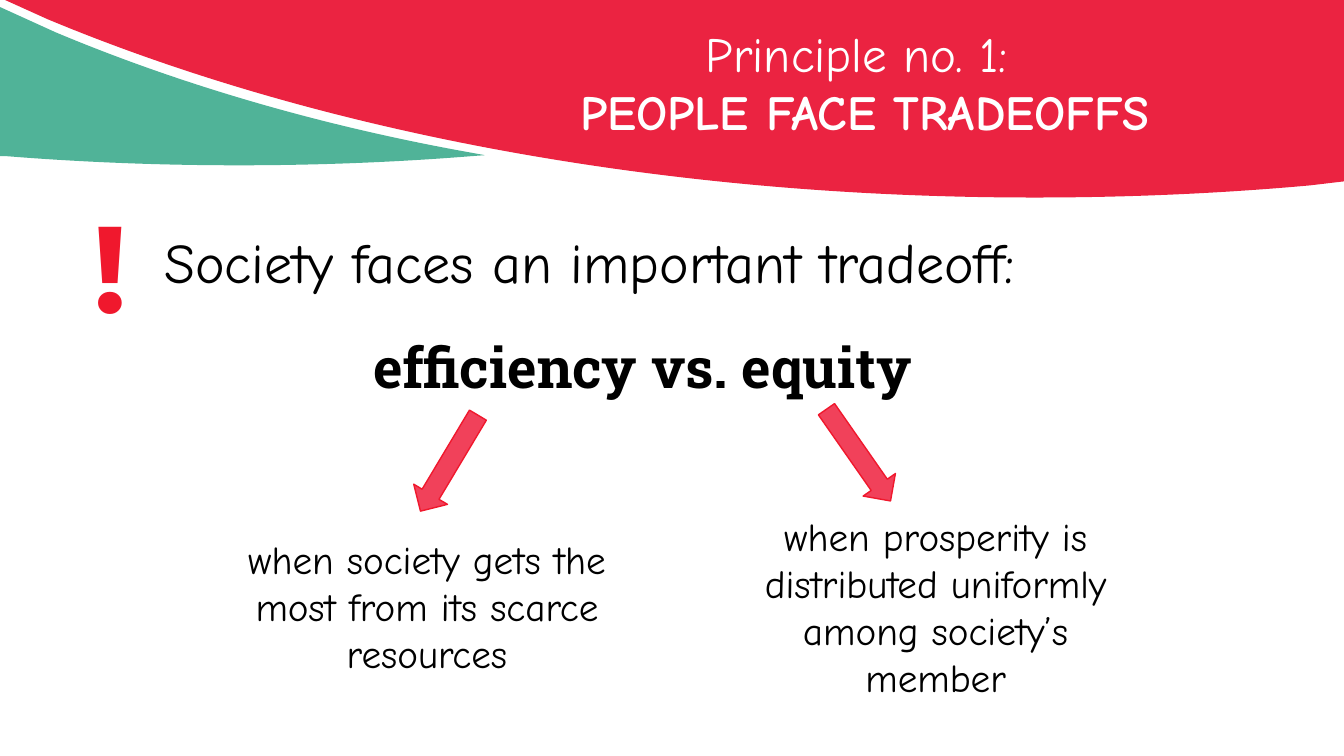
from lxml import etree
from pptx import Presentation
from pptx.dml.color import RGBColor
from pptx.enum.shapes import MSO_SHAPE
from pptx.enum.text import PP_ALIGN
from pptx.oxml.ns import qn
from pptx.util import Inches, Pt

DOWN_ARROW = MSO_SHAPE.DOWN_ARROW
LEFT, CENTER = PP_ALIGN.LEFT, PP_ALIGN.CENTER

WHITE = RGBColor(0xFF, 0xFF, 0xFF)
BLACK = RGBColor(0x00, 0x00, 0x00)
CRIMSON = RGBColor(0xEB, 0x23, 0x41)
GREEN = RGBColor(0x50, 0xB3, 0x98)
RED = RGBColor(0xF0, 0x18, 0x2D)
ROSE = RGBColor(0xF1, 0x41, 0x5A)

HAND, SANS, SLAB = "Comic Neue", "Montserrat", "Roboto Slab"


def add_swoosh(slide, left, top, start, segments, color):
    ends = [segment[-1] for segment in segments]
    min_x, min_y = (min(axis) for axis in zip(start, *ends))
    builder = slide.shapes.build_freeform(*map(Inches, start), scale=1.0)
    builder.add_line_segments([tuple(map(Inches, end)) for end in ends], close=True)
    swoosh = builder.convert_to_shape(Inches(left), Inches(top))
    for edge, segment in zip(swoosh._element.xpath(".//a:lnTo"), segments):
        if len(segment) == 3:
            edge.tag = qn("a:cubicBezTo")
            for index, (x, y) in enumerate(segment[:2]):
                control = etree.Element(qn("a:pt"))
                control.set("x", str(Inches(x) - Inches(min_x)))
                control.set("y", str(Inches(y) - Inches(min_y)))
                edge.insert(index, control)
    swoosh.shadow.inherit = False
    swoosh.fill.solid()
    swoosh.fill.fore_color.rgb = color
    swoosh.line.fill.background()


def add_text(slide, box, lines, size, font, color=BLACK, align=CENTER, bold_line=None):
    text_box = slide.shapes.add_textbox(*map(Inches, box))
    frame = text_box.text_frame
    frame.word_wrap = True
    for index, line in enumerate(lines):
        paragraph = frame.paragraphs[0] if index == 0 else frame.add_paragraph()
        paragraph.text = line
        paragraph.alignment = align
        paragraph.font.name = font
        paragraph.font.size = Pt(size)
        paragraph.font.bold = index == bold_line
        paragraph.font.color.rgb = color


def add_header(slide, left, top):
    add_swoosh(slide, left, top, (0.05, 0), [
        [(13.33, 0)], [(13.33, 1.8)], [(12.99, 1.84)],
        [(12.1, 1.92), (11.19, 1.96), (10.26, 1.96)],
        [(6.54, 1.96), (3.13, 1.3), (0.47, 0.19)],
    ], CRIMSON)
    add_swoosh(slide, left, top, (0, 0.07), [
        [(0.55, 0.32)],
        [(1.74, 0.82), (3.11, 1.23), (4.59, 1.5)],
        [(4.81, 1.54)], [(4.67, 1.55)],
        [(3.92, 1.61), (3.15, 1.64), (2.37, 1.64)],
        [(1.59, 1.64), (0.82, 1.61), (0.07, 1.55)],
        [(0, 1.55)],
    ], GREEN)
    add_text(slide, (left + 3.45, top + 0.18, 10.26, 1.28),
             ["Principle no. 1: ", "PEOPLE FACE TRADEOFFS"],
             35, HAND, WHITE, bold_line=1)


def add_statement(slide, left, top):
    add_text(slide, (left, top, 2.21, 1.58), ["!"], 88, SANS, RED, LEFT, 0)
    add_text(slide, (left + 0.71, top + 0.37, 10.99, 0.77),
             ["Society faces an important tradeoff:"], 40, HAND, align=LEFT)
    add_text(slide, (left + 0.06, top + 1.41, 10.99, 0.77),
             ["efficiency vs. equity"], 40, SLAB, bold_line=0)


def add_branch(slide, box, meaning, arrow_left, arrow_top, rotation):
    arrow = slide.shapes.add_shape(
        DOWN_ARROW, Inches(arrow_left), Inches(arrow_top), Inches(0.39), Inches(1.11))
    arrow.rotation = rotation
    arrow.shadow.inherit = False
    arrow.fill.solid()
    arrow.fill.fore_color.rgb = ROSE
    arrow.line.color.rgb = RED
    arrow.line.width = Pt(1)
    add_text(slide, box, [meaning], 28, HAND)


def main():
    deck = Presentation()
    deck.slide_width, deck.slide_height = Inches(13.33), Inches(7.5)
    slide = deck.slides.add_slide(deck.slide_layouts[6])
    add_header(slide, 0, 0)
    add_statement(slide, 0.82, 1.84)
    add_branch(slide, (2.1, 5.26, 4.27, 1.51),
               "when society gets the most from its scarce resources",
               4.26, 4.04, 30.9)
    add_branch(slide, (7.13, 5.03, 4.3, 1.99),
               "when prosperity is distributed uniformly among society’s member",
               8.32, 3.96, 325.1)
    deck.save("out.pptx")


if __name__ == "__main__":
    main()
